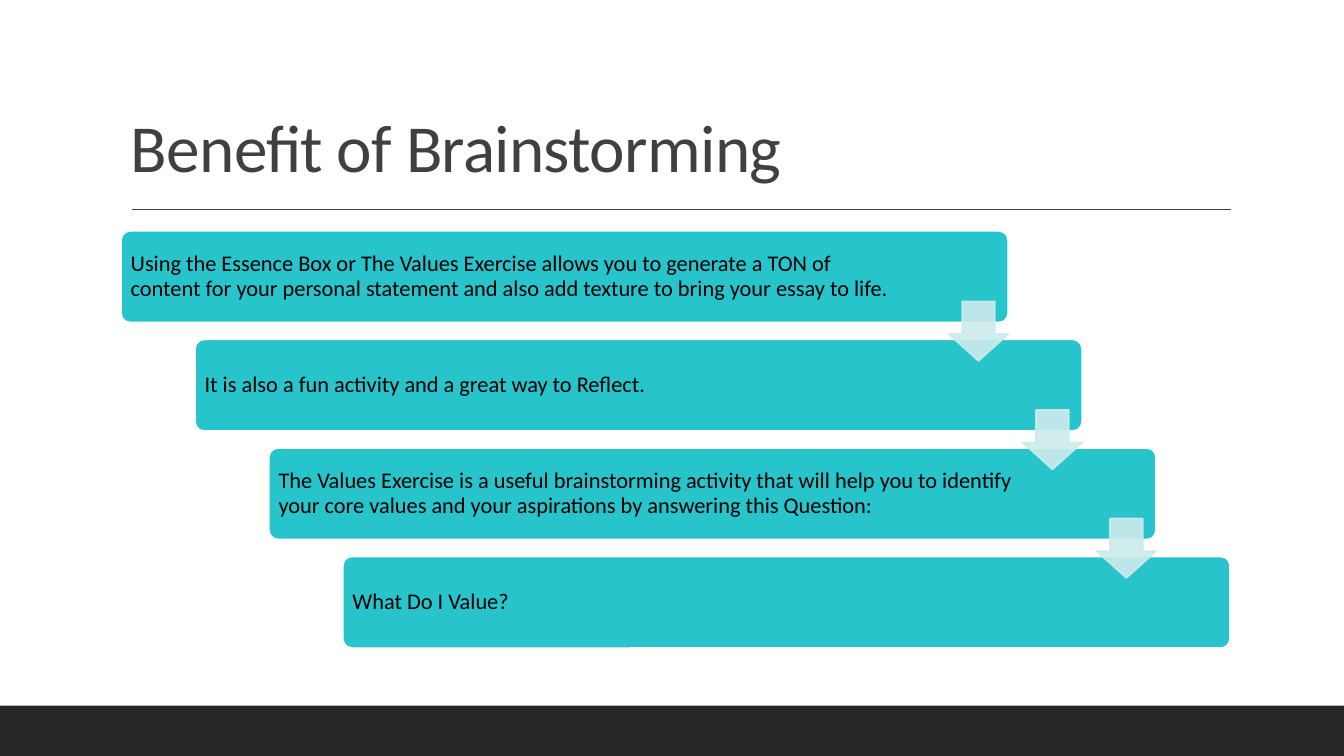
"""Builds the slide on the benefit of brainstorming: four stepped cards joined by arrows."""
from lxml import etree
from pptx import Presentation
from pptx.dml.color import RGBColor
from pptx.enum.shapes import MSO_CONNECTOR, MSO_SHAPE
from pptx.enum.text import MSO_ANCHOR, PP_ALIGN
from pptx.oxml.ns import qn
from pptx.util import Inches, Pt

RECTANGLE, CARD = MSO_SHAPE.RECTANGLE, MSO_SHAPE.ROUNDED_RECTANGLE
ARROW, STRAIGHT = MSO_SHAPE.DOWN_ARROW, MSO_CONNECTOR.STRAIGHT
MIDDLE, BOTTOM, LEFT = MSO_ANCHOR.MIDDLE, MSO_ANCHOR.BOTTOM, PP_ALIGN.LEFT

TITLE = "Benefit of Brainstorming"
STEPS = [
    "Using the Essence Box or The Values Exercise allows you to generate a TON of "
    "content for your personal statement and also add texture to bring your essay to life.",
    "It is also a fun activity and a great way to Reflect.",
    "The Values Exercise is a useful brainstorming activity that will help you to identify "
    "your core values and your aspirations by answering this Question:",
    "What Do I Value?",
]
COLORS = {"title": "404040", "footer": "262626", "card": "28C4CC",
          "edge": "FFFFFF", "arrow": "CDEAEC", "text": "000000"}
FONT = "Calibri"
WIDTH, HEIGHT = 13.33, 7.5
FOOTER_HEIGHT = HEIGHT / 15
LEFT_EDGE, RIGHT_EDGE, TOP_EDGE, BOTTOM_EDGE = 1.2, 12.2, 2.29, 6.43
CARD_WIDTH, CARD_HEIGHT = 8.8, 0.91
ARROW_SIZE, ARROW_DROP = 0.59, 0.7
STEP_X = (RIGHT_EDGE - LEFT_EDGE - CARD_WIDTH) / (len(STEPS) - 1)
STEP_Y = (BOTTOM_EDGE - TOP_EDGE - CARD_HEIGHT) / (len(STEPS) - 1)
INSET, FIRST_RIGHT_INSET, RIGHT_INSET = 0.07, 1.07, 1.38


def color(name):
    return RGBColor.from_string(COLORS[name])


def add_block(page, kind, place, fill, edge=None, adjustments=()):
    block = page.shapes.add_shape(kind, *map(Inches, place))
    block.shadow.inherit = False
    block.fill.solid()
    block.fill.fore_color.rgb = color(fill)
    if edge:
        block.line.color.rgb = color(edge)
        block.line.width = Pt(1.25)
    else:
        block.line.fill.background()
    for index, value in enumerate(adjustments):
        block.adjustments[index] = value
    return block


def write(box, text, size, name, anchor):
    frame = box.text_frame
    frame.word_wrap = True
    frame.vertical_anchor = anchor
    para = frame.paragraphs[0]
    para.text = text
    para.alignment = LEFT
    para.line_spacing = 0.9
    para.font.name = FONT
    para.font.size = Pt(size)
    para.font.color.rgb = color(name)
    return frame


def add_heading(page):
    box = page.shapes.add_textbox(*map(Inches, (LEFT_EDGE, 0.31, 11, 1.59)))
    frame = write(box, TITLE, 48, "title", BOTTOM)
    frame.paragraphs[0].runs[0].font._element.set("spc", "-50")
    rule = page.shapes.add_connector(STRAIGHT, *map(Inches, (1.31, 2.08, 12.21, 2.08)))
    rule.line.color.rgb = color("title")
    rule.line.width = Pt(1)
    etree.SubElement(rule._element.spPr, qn("a:effectLst"))


def add_card(page, index, text):
    place = (LEFT_EDGE + index * STEP_X, TOP_EDGE + index * STEP_Y, CARD_WIDTH, CARD_HEIGHT)
    card = add_block(page, CARD, place, "card", "edge", (0.1,))
    frame = write(card, text, 16, "text", MIDDLE)
    frame.margin_left = frame.margin_top = frame.margin_bottom = Inches(INSET)
    frame.margin_right = Inches(RIGHT_INSET if index else FIRST_RIGHT_INSET)


def add_arrow(page, index):
    left = LEFT_EDGE + index * STEP_X + CARD_WIDTH - ARROW_SIZE
    top = TOP_EDGE + index * STEP_Y + ARROW_DROP
    arrow = add_block(page, ARROW, (left, top, ARROW_SIZE, ARROW_SIZE),
                      "arrow", "arrow", (0.55, 0.45))
    for tint in arrow._element.spPr.iter(qn("a:srgbClr")):
        etree.SubElement(tint, qn("a:alpha"), val="90000")


def main():
    deck = Presentation()
    deck.slide_width, deck.slide_height = Inches(WIDTH), Inches(HEIGHT)
    page = deck.slides.add_slide(deck.slide_layouts[6])
    add_heading(page)
    add_block(page, RECTANGLE, (0, HEIGHT - FOOTER_HEIGHT, WIDTH, FOOTER_HEIGHT), "footer")
    for index, text in enumerate(STEPS):
        add_card(page, index, text)
    for index in range(len(STEPS) - 1):
        add_arrow(page, index)
    deck.save("out.pptx")


if __name__ == "__main__":
    main()
